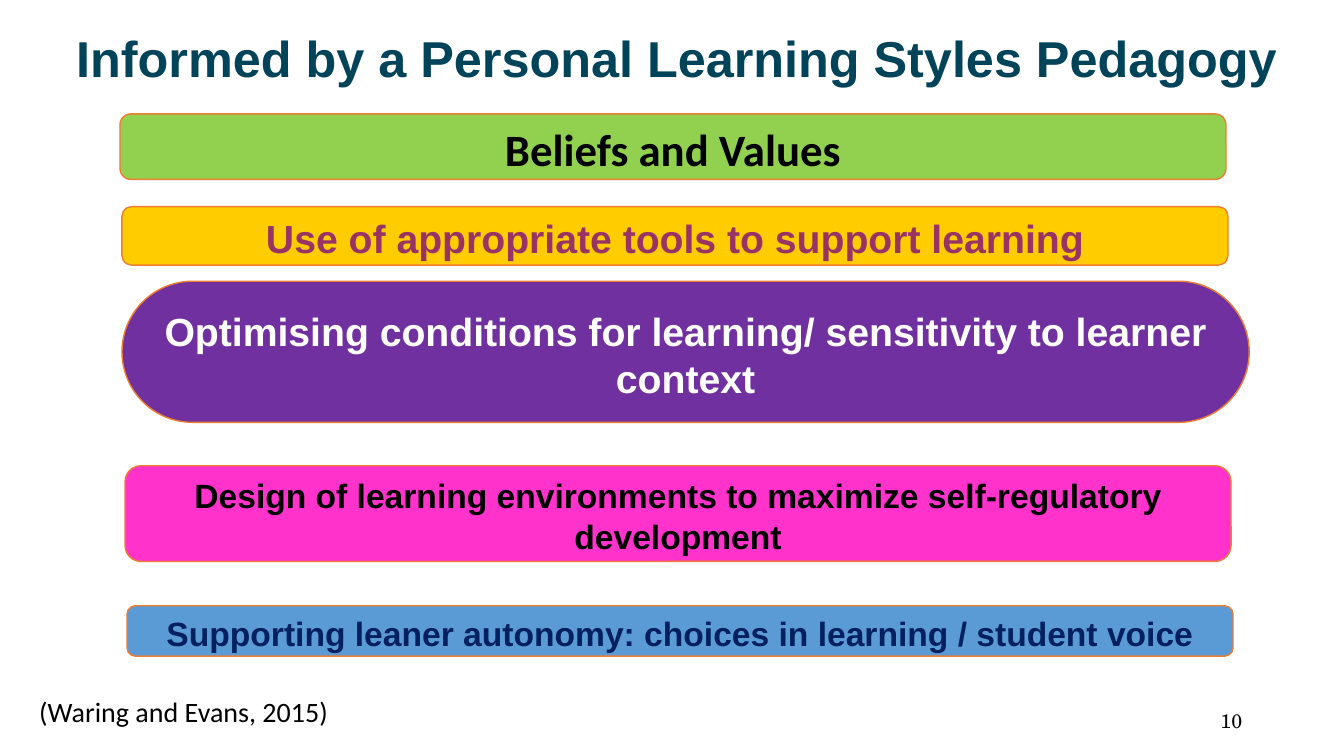
from pptx import Presentation
from pptx import util as u
from pptx.dml.color import RGBColor
from pptx.enum import shapes, text

PX = 9144  # EMU per px, 100 px to the inch
COLORS = {
    "white": "FFFFFF", "black": "000000", "teal": "014359", "orange": "ED7D31",
    "green": "92D050", "yellow": "FFCC00", "plum": "993366", "purple": "7030A0",
    "pink": "FF33CC", "blue": "5B9BD5", "navy": "002060",
}


def rgb(name):
    return RGBColor.from_string(COLORS[name])


def px(*lengths):
    return [u.Emu(n * PX) for n in lengths]


def write(sp, words, size, font="Arial", color="black", bold=False,
          align=text.PP_ALIGN.CENTER, anchor=text.MSO_ANCHOR.TOP,
          bottom=5, spacing=None):
    tf = sp.text_frame
    tf.word_wrap = True
    tf.auto_size = text.MSO_AUTO_SIZE.NONE
    tf.vertical_anchor = anchor
    tf.margin_left, tf.margin_top, tf.margin_right, tf.margin_bottom = px(10, 5, 10, bottom)
    p = tf.paragraphs[0]
    p.alignment = align
    if spacing:
        p.line_spacing = spacing
    r = p.add_run()
    r.text = words
    r.font.size, r.font.name, r.font.bold = u.Pt(size), font, bold
    r.font.color.rgb = rgb(color)


def add_title(s, box, words):
    sp = s.shapes.title
    sp.left, sp.top, sp.width, sp.height = px(*box)
    sp.fill.solid()
    sp.fill.fore_color.rgb = rgb("white")
    write(sp, words, 36, color="teal", bold=True,
          anchor=text.MSO_ANCHOR.MIDDLE, spacing=0.9)


def add_band(s, box, words, fill, color, size, font="Arial", corner=0.16667):
    sp = s.shapes.add_shape(shapes.MSO_SHAPE.ROUNDED_RECTANGLE, *px(*box))
    sp.adjustments[0] = corner
    sp.shadow.inherit = False
    sp.fill.solid()
    sp.fill.fore_color.rgb = rgb(fill)
    sp.line.color.rgb = rgb("orange")
    sp.line.width = u.Pt(1)
    write(sp, words, size, font=font, color=color, bold=True, bottom=0)


def add_label(s, box, words, size, font, **fmt):
    write(s.shapes.add_textbox(*px(*box)), words, size, font=font, **fmt)


def main():
    prs = Presentation()
    prs.slide_width, prs.slide_height = px(1333, 750)
    s = prs.slides.add_slide(prs.slide_layouts[5])

    # Title
    add_title(s, (52, 25, 1239, 71), "Informed by a Personal Learning Styles Pedagogy")

    # Pedagogy bands, top to bottom
    add_band(s, (119, 113, 1097, 65), "Beliefs and Values",
             "green", "black", 32, font="Calibri")
    add_band(s, (121, 205, 1097, 58), "Use of appropriate tools to support learning",
             "yellow", "plum", 28)
    add_band(s, (121, 279, 1118, 140),
             "Optimising conditions for learning/ sensitivity to learner context",
             "purple", "white", 28, corner=0.5)
    add_band(s, (124, 462, 1097, 95),
             "Design of learning environments to maximize self-regulatory development",
             "pink", "black", 24)
    add_band(s, (126, 601, 1097, 50),
             "Supporting leaner autonomy: choices in learning / student voice",
             "blue", "navy", 24)

    # Citation and slide number
    add_label(s, (29, 684, 556, 44), "(Waring and Evans, 2015)", 20, "Calibri",
              align=text.PP_ALIGN.LEFT)
    add_label(s, (942, 695, 300, 40), "10", 14, "TeX Gyre Schola",
              align=text.PP_ALIGN.RIGHT, anchor=text.MSO_ANCHOR.MIDDLE)

    prs.save("out.pptx")


if __name__ == "__main__":
    main()
